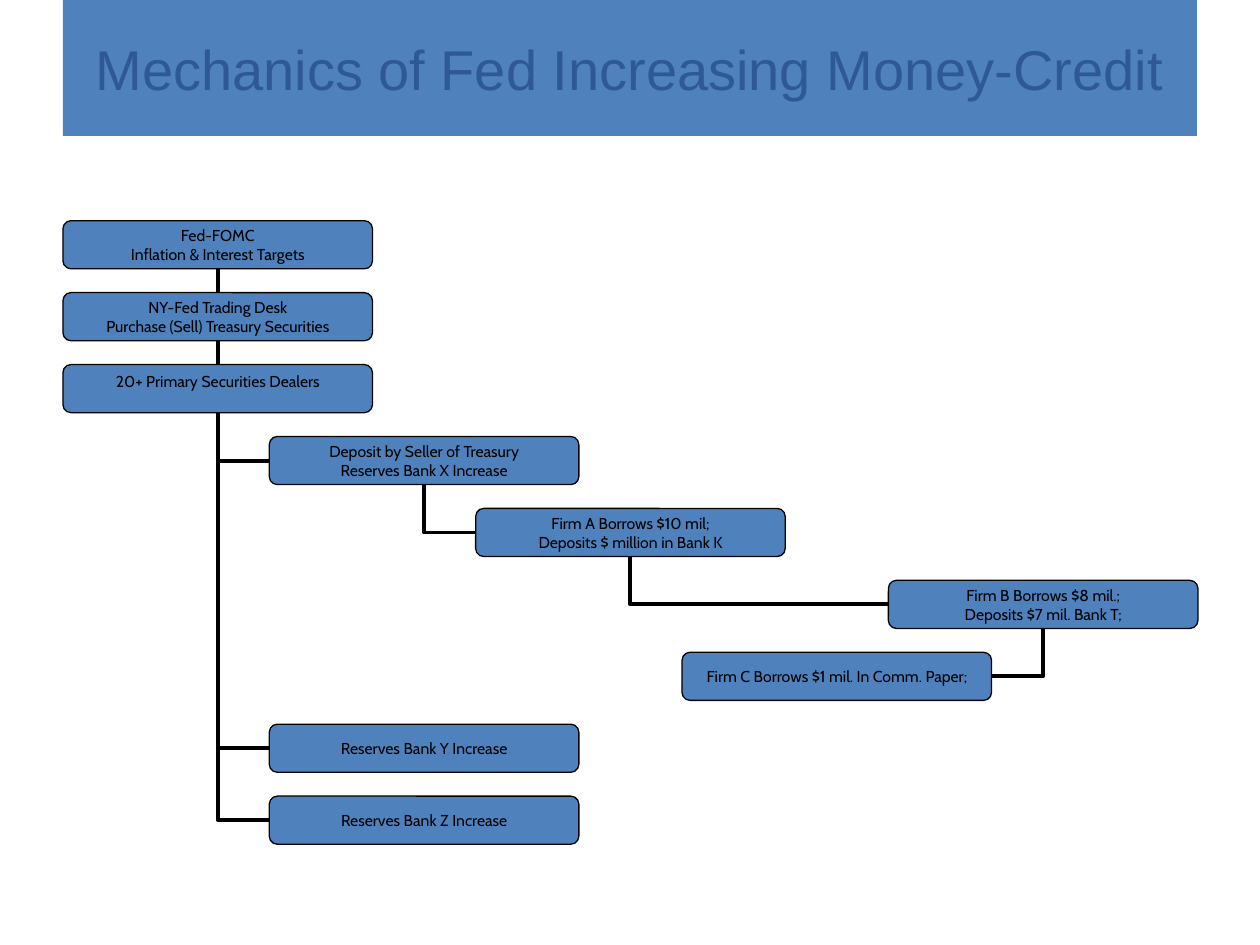
from lxml import etree
from pptx import Presentation
from pptx.dml.color import RGBColor
from pptx.enum.shapes import MSO_CONNECTOR as Connector, MSO_SHAPE as Shape
from pptx.enum.text import MSO_ANCHOR as Anchor, PP_ALIGN as Align
from pptx.oxml.ns import qn
from pptx.util import Cm, Pt

BLUE, NAVY, BLACK = "4F81BD", "2F5897", "000000"
COLUMN_STEP, ROW_STEP = 4.16, 1.45
BOX_WIDTH, BOX_HEIGHT = 6.24, 0.97
LEFT, BOTTOM, RIGHT = 1, 2, 3  # connection sites of a rounded rectangle

# name: (column, row, text)
BOXES = {
    "committee": (0, 0, "Fed-FOMC\nInflation & Interest Targets"),
    "desk": (0, 1, "NY-Fed Trading Desk\nPurchase (Sell) Treasury Securities"),
    "dealers": (0, 2, "20+ Primary Securities Dealers"),
    "bank_x": (1, 3, "Deposit by Seller of Treasury\nReserves Bank X Increase"),
    "firm_a": (2, 4, "Firm A Borrows $10 mil;\nDeposits $ million in Bank K"),
    "firm_b": (4, 5, "Firm B Borrows $8 mil.;\nDeposits $7 mil. Bank T;"),
    "firm_c": (3, 6, "Firm C Borrows $1 mil. In Comm. Paper;"),
    "bank_y": (1, 7, "Reserves Bank Y Increase"),
    "bank_z": (1, 8, "Reserves Bank Z Increase"),
}
STRAIGHT_LINKS = [("committee", "desk"), ("desk", "dealers")]
# parent, child, side of the child where the line arrives
BENT_LINKS = [
    ("dealers", "bank_x", LEFT),
    ("dealers", "bank_y", LEFT),
    ("dealers", "bank_z", LEFT),
    ("bank_x", "firm_a", LEFT),
    ("firm_a", "firm_b", LEFT),
    ("firm_b", "firm_c", RIGHT),
]


def color(hex_string):
    return RGBColor.from_string(hex_string)


def add_filled_shape(slide, kind, left, top, width, height):
    shape = slide.shapes.add_shape(kind, Cm(left), Cm(top), Cm(width), Cm(height))
    shape.shadow.inherit = False
    shape.fill.solid()
    shape.fill.fore_color.rgb = color(BLUE)
    return shape


def write_text(shape, text, font_name, size, text_color):
    frame = shape.text_frame
    frame.text = text
    frame.vertical_anchor = Anchor.MIDDLE
    for paragraph in frame.paragraphs:
        paragraph.alignment = Align.CENTER
        paragraph.font.name = font_name
        paragraph.font.size = Pt(size)
        paragraph.font.color.rgb = color(text_color)


def add_title(slide, left, top, width, height):
    banner = add_filled_shape(slide, Shape.RECTANGLE, left, top, width, height)
    banner.line.fill.background()
    write_text(banner, "Mechanics of Fed Increasing Money-Credit", "Arial", 32, NAVY)


def add_box(slide, left, top, text):
    box = add_filled_shape(slide, Shape.ROUNDED_RECTANGLE, left, top, BOX_WIDTH, BOX_HEIGHT)
    box.line.color.rgb = color(BLACK)
    box.line.width = Pt(0.75)
    write_text(box, text, "Cabin", 9, BLACK)
    frame = box.text_frame
    frame.word_wrap = False
    frame.margin_left = frame.margin_right = frame.margin_top = frame.margin_bottom = 0
    return box


def add_link(slide, kind, child, child_site, parent):
    """Link a side of the child to the bottom of its parent."""
    link = slide.shapes.add_connector(kind, 0, 0, 0, 0)
    link.begin_connect(child, child_site)
    link.end_connect(parent, BOTTOM)
    link.line.color.rgb = color(BLACK)
    link.line.width = Pt(2.25)
    properties = link._element.spPr
    etree.SubElement(properties, qn("a:effectLst"))
    if kind == Connector.ELBOW:
        properties.find(qn("a:prstGeom")).set("prst", "bentConnector2")


def add_flow_chart(slide, left, top):
    boxes = {
        name: add_box(slide, left + column * COLUMN_STEP, top + row * ROW_STEP, text)
        for name, (column, row, text) in BOXES.items()
    }
    dealers_frame = boxes["dealers"].text_frame
    dealers_frame.vertical_anchor = Anchor.TOP
    dealers_frame.margin_top = Cm(0.1)

    for parent, child in STRAIGHT_LINKS:
        add_link(slide, Connector.STRAIGHT, boxes[child], 0, boxes[parent])
    for parent, child, side in BENT_LINKS:
        add_link(slide, Connector.ELBOW, boxes[child], side, boxes[parent])


def main():
    presentation = Presentation()
    presentation.slide_width, presentation.slide_height = Cm(25.4), Cm(19.05)
    slide = presentation.slides.add_slide(presentation.slide_layouts[6])
    add_title(slide, 1.27, 0, 22.86, 2.74)
    add_flow_chart(slide, 1.27, 4.45)
    presentation.save("out.pptx")


if __name__ == "__main__":
    main()
